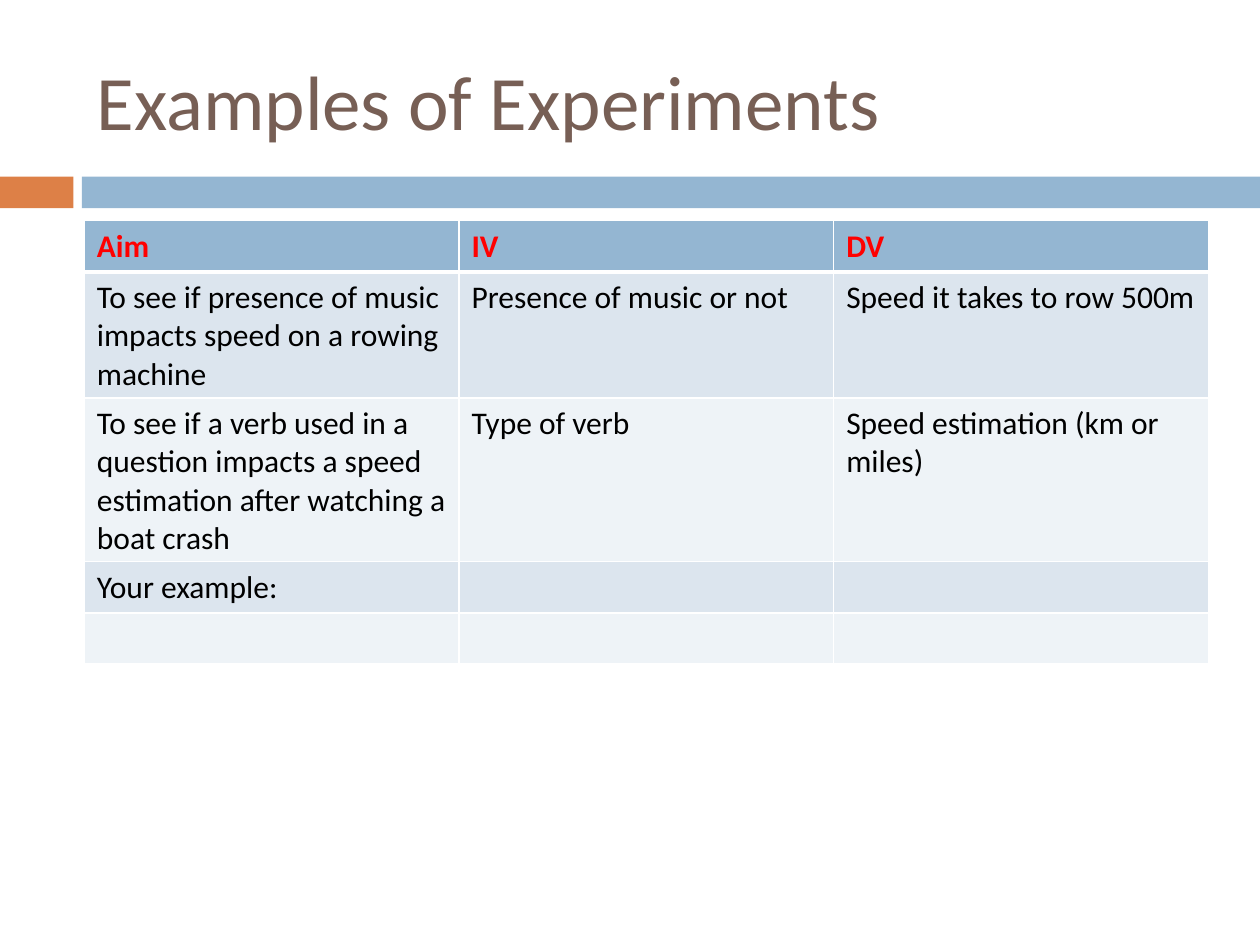
from lxml import etree
from pptx import Presentation
from pptx.dml.color import RGBColor
from pptx.enum import shapes, text
from pptx.oxml import ns
from pptx.util import Cm, Pt

WHITE = RGBColor(0xFF, 0xFF, 0xFF)
BLACK = RGBColor(0x00, 0x00, 0x00)
RED = RGBColor(0xFF, 0x00, 0x00)
BROWN = RGBColor(0x77, 0x5F, 0x55)
ORANGE = RGBColor(0xDD, 0x80, 0x47)
BLUE = RGBColor(0x94, 0xB6, 0xD2)
BANDS = [RGBColor(0xDC, 0xE5, 0xEE), RGBColor(0xEE, 0xF3, 0xF7)]

TITLE_FORMAT = {"name": "Calibri", "size": Pt(44), "bold": False}
HEADER_FORMAT = {"name": "Calibri", "size": Pt(18), "bold": True}
BODY_FORMAT = {"name": "Calibri", "size": Pt(18), "bold": False}

EXPERIMENTS = [
    ["Aim", "IV", "DV"],
    ["To see if presence of music impacts speed on a rowing machine",
     "Presence of music or not", "Speed it takes to row 500m"],
    ["To see if a verb used in a question impacts a speed estimation "
     "after watching a boat crash",
     "Type of verb", "Speed estimation (km or miles)"],
    ["Your example:", "", ""],
    ["", "", ""],
]


def write(frame, wording, font_format, color):
    run = frame.paragraphs[0].add_run()
    run.text = wording
    for attribute, value in font_format.items():
        setattr(run.font, attribute, value)
    run.font.color.rgb = color


def add_title(slide, left, top, width, height):
    title = slide.shapes.add_textbox(Cm(left), Cm(top), Cm(width), Cm(height))
    title.text_frame.word_wrap = True
    title.text_frame.vertical_anchor = text.MSO_ANCHOR.MIDDLE
    write(title.text_frame, "Examples of Experiments", TITLE_FORMAT, BROWN)


def add_divider(slide, left, top, width, height):
    """A short orange block, a gap, then a blue band to the right edge."""
    block, gap = 1.48, 0.17
    band_start = block + gap
    for offset, length, color in [(0, block, ORANGE),
                                  (band_start, width - band_start, BLUE)]:
        bar = slide.shapes.add_shape(
            shapes.MSO_SHAPE.RECTANGLE,
            Cm(left + offset), Cm(top), Cm(length), Cm(height))
        bar.shadow.inherit = False
        bar.fill.solid()
        bar.fill.fore_color.rgb = color
        bar.line.fill.background()


def set_borders(cell, widths):
    properties = cell._tc.get_or_add_tcPr()
    for side, points in widths.items():
        border = etree.SubElement(properties, ns.qn(f"a:ln{side}"), w=str(Pt(points)))
        fill = etree.SubElement(border, ns.qn("a:solidFill"))
        etree.SubElement(fill, ns.qn("a:srgbClr"), val=str(WHITE))


def add_experiments(slide, left, top, width, row_height):
    row_count, column_count = len(EXPERIMENTS), len(EXPERIMENTS[0])
    table = slide.shapes.add_table(
        row_count, column_count, Cm(left), Cm(top),
        Cm(width), Cm(row_height * row_count)).table
    for column in table.columns:
        column.width = Cm(width / column_count)

    for r, row in enumerate(EXPERIMENTS):
        header = r == 0
        for c, wording in enumerate(row):
            cell = table.cell(r, c)
            # Thick rule between header and body; borders precede the fill
            set_borders(cell, {"L": 1, "R": 1, "T": 3 if r == 1 else 1,
                               "B": 3 if header else 1})
            cell.fill.solid()
            cell.fill.fore_color.rgb = BLUE if header else BANDS[(r - 1) % 2]
            if wording:
                write(cell.text_frame, wording,
                      HEADER_FORMAT if header else BODY_FORMAT,
                      RED if header else BLACK)


def main():
    deck = Presentation()
    deck.slide_width, deck.slide_height = Cm(25.4), Cm(19.05)
    slide = deck.slides.add_slide(deck.slide_layouts[6])
    add_divider(slide, 0, 3.56, 25.4, 0.64)
    add_title(slide, 1.7, 0.64, 22.66, 2.74)
    add_experiments(slide, 1.7, 4.45, 22.66, 1.03)
    deck.save("out.pptx")


if __name__ == "__main__":
    main()
